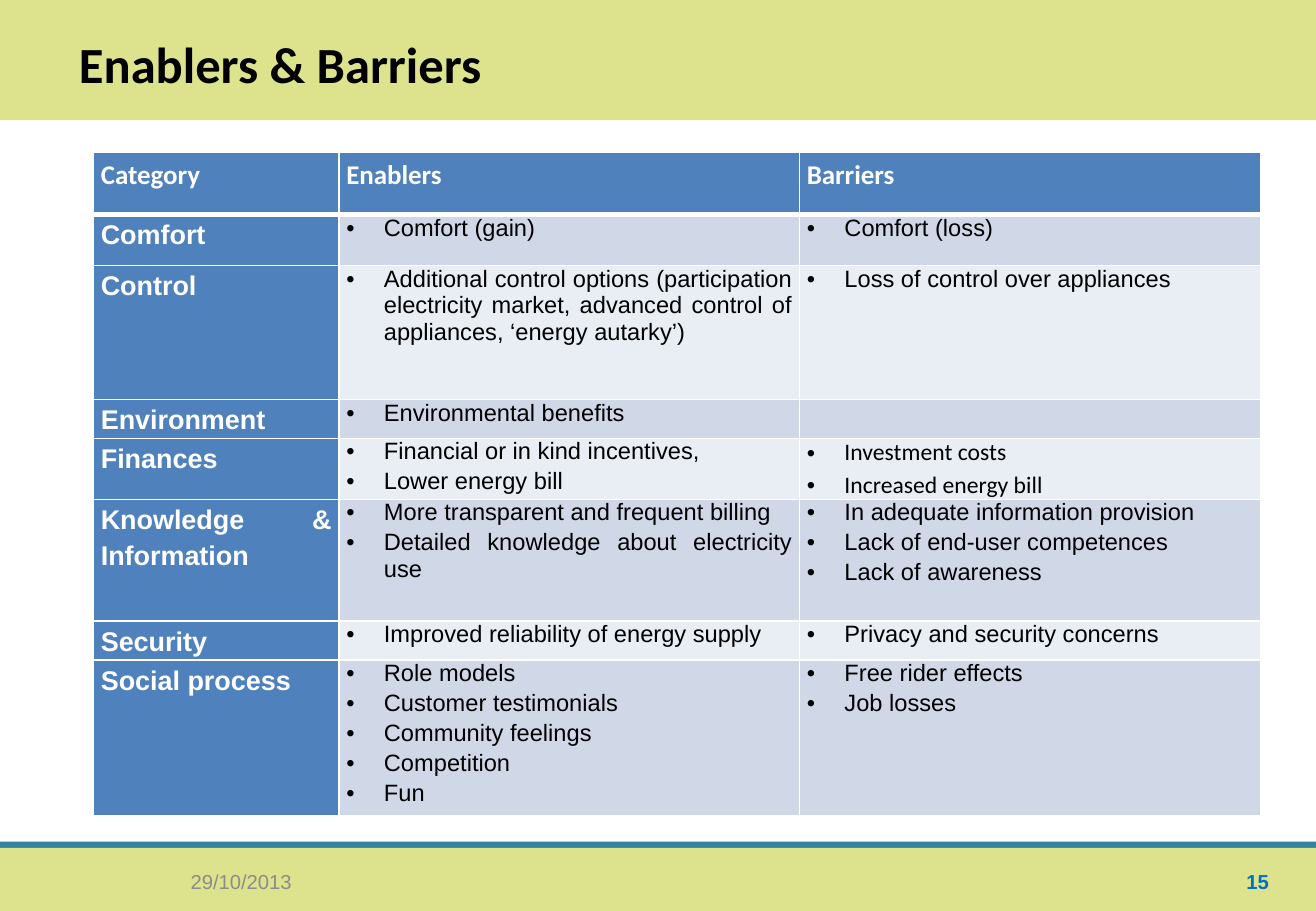
from dataclasses import dataclass

from lxml.etree import SubElement
from pptx import Presentation
from pptx.dml.color import RGBColor
from pptx.enum.shapes import MSO_SHAPE as Shape
from pptx.enum.text import MSO_ANCHOR as Anchor, PP_ALIGN as Align
from pptx.oxml import parse_xml
from pptx.oxml.ns import nsdecls, qn
from pptx.util import Emu, Inches, Pt

WIDTH, HEIGHT = Inches(10.83), Inches(7.5)
WHITE, BLACK, BLUE, LIME, TEAL = "FFFFFF", "000000", "4F81BD", "DDE38D", "31859C"
STRIPES = ("E9EDF4", "D0D8E8")
COLUMN_SHARES = (18.65, 35, 35.05)
ROW_SHARES = (6.9, 5.6, 14.7, 4, 6.7, 13.35, 4, 16)
HEADINGS = ("Category", "Enablers", "Barriers")


@dataclass
class Box:
    """Place and size, in percent of the slide's width and height."""
    left: float
    top: float
    width: float
    height: float

    def lengths(self) -> tuple[Emu, Emu, Emu, Emu]:
        """Return left, top, width and height as lengths."""
        return across(self.left), down(self.top), across(self.width), down(self.height)


@dataclass
class Style:
    """Look of the text in one paragraph."""
    size: float
    color: str
    bold: bool = False
    font: str = "Arial"
    align: Align = Align.LEFT


@dataclass
class Band:
    """Coloured strip across the slide."""
    box: Box
    color: str


@dataclass
class Label:
    """Short text in the footer."""
    box: Box
    text: str
    style: Style


@dataclass
class Category:
    """One body row of the table."""
    name: str
    enablers: tuple[str, ...]
    barriers: tuple[str, ...]
    barrier_font: str = "Arial"


BANDS = (
    Band(Box(0, 92.4, 100, 0.67), TEAL),
    Band(Box(0, 93.07, 100, 6.93), LIME),
    Band(Box(0, 0, 100, 13.2), LIME),
)
LABELS = (
    Label(Box(13.57, 94.13, 30.56, 5.33), "29/10/2013", Style(12, "8C8C8C")),
    Label(Box(89.47, 94.13, 7.85, 5.33), "15", Style(12, "0070C0", True, align=Align.RIGHT)),
)
CATEGORIES = (
    Category("Comfort", ("Comfort (gain)",), ("Comfort (loss)",)),
    Category("Control",
             ("Additional control options (participation electricity market, "
              "advanced control of appliances, ‘energy autarky’)",),
             ("Loss of control over appliances",)),
    Category("Environment", ("Environmental benefits",), ()),
    Category("Finances", ("Financial or in kind incentives,", "Lower energy bill"),
             ("Investment costs", "Increased energy bill"), "Calibri"),
    Category("Knowledge & Information",
             ("More transparent and frequent billing", "Detailed knowledge about electricity use"),
             ("In adequate information provision", "Lack of end-user competences",
              "Lack of awareness")),
    Category("Security", ("Improved reliability of energy supply",),
             ("Privacy and security concerns",)),
    Category("Social process",
             ("Role models", "Customer testimonials", "Community feelings", "Competition", "Fun"),
             ("Free rider effects", "Job losses")),
)


def across(percent: float) -> Emu:
    """Turn a share of the slide's width into a length."""
    return Emu(round(WIDTH * percent / 100))


def down(percent: float) -> Emu:
    """Turn a share of the slide's height into a length."""
    return Emu(round(HEIGHT * percent / 100))


def paint(target, color: str) -> None:
    """Give a fill or a font a solid colour."""
    if hasattr(target, "solid"):
        target.solid()
        target.fore_color.rgb = RGBColor.from_string(color)
    else:
        target.color.rgb = RGBColor.from_string(color)


def style_paragraph(paragraph, style: Style) -> None:
    """Apply a style to a paragraph."""
    paragraph.alignment = style.align
    font = paragraph.font
    font.size, font.bold, font.name = Pt(style.size), style.bold, style.font
    paint(font, style.color)


def add_band(slide, band: Band) -> None:
    """Draw a coloured strip."""
    shape = slide.shapes.add_shape(Shape.RECTANGLE, *band.box.lengths())
    shape.shadow.inherit = False
    paint(shape.fill, band.color)
    shape.line.fill.background()


def write_label(shape, text: str, style: Style) -> None:
    """Write one vertically centred line in a shape."""
    frame = shape.text_frame
    frame.word_wrap = True
    frame.vertical_anchor = Anchor.MIDDLE
    frame.text = text
    style_paragraph(frame.paragraphs[0], style)


def add_bullet(paragraph) -> None:
    """Give a paragraph a hanging bullet."""
    properties = paragraph._p.get_or_add_pPr()
    properties.set("marL", str(Inches(0.31)))
    properties.set("indent", str(-Inches(0.31)))
    SubElement(properties, qn("a:buFont"), typeface="Arial")
    SubElement(properties, qn("a:buChar"), char="•")


def format_cell(cell, color: str, row: int) -> None:
    """Set a cell's margins, fill and white borders."""
    cell.margin_left = cell.margin_right = Inches(0.06)
    cell.margin_top = cell.margin_bottom = 0
    paint(cell.fill, color)
    thick_side = {0: "B", 1: "T"}.get(row)
    for index, side in enumerate("LRTB"):
        width = Pt(3 if side == thick_side else 1)
        border = parse_xml(
            f'<a:ln{side} {nsdecls("a")} w="{width}"><a:solidFill>'
            f'<a:srgbClr val="{WHITE}"/></a:solidFill></a:ln{side}>')
        cell._tc.get_or_add_tcPr().insert(index, border)


def write_heading(cell, text: str, font: str) -> None:
    """Write a bold white heading in a cell."""
    cell.text = text
    paragraph = cell.text_frame.paragraphs[0]
    paragraph.line_spacing = 1.2
    style_paragraph(paragraph, Style(16, WHITE, True, font, Align.JUSTIFY))


def write_bullets(cell, items: tuple[str, ...], font: str) -> None:
    """Write a bulleted list in a cell."""
    frame = cell.text_frame
    for index, item in enumerate(items):
        paragraph = frame.add_paragraph() if index else frame.paragraphs[0]
        paragraph.text = item
        add_bullet(paragraph)
        if index:
            paragraph.space_before = Pt(2)
        style_paragraph(paragraph, Style(14, BLACK, False, font, Align.JUSTIFY))


def add_category_table(slide) -> None:
    """Draw the table of enablers and barriers."""
    box = Box(7.11, 16.67, sum(COLUMN_SHARES), sum(ROW_SHARES))
    table = slide.shapes.add_table(len(ROW_SHARES), len(COLUMN_SHARES), *box.lengths()).table
    for column, share in zip(table.columns, COLUMN_SHARES):
        column.width = across(share)
    for index, (row, share) in enumerate(zip(table.rows, ROW_SHARES)):
        row.height = down(share)
        for position, cell in enumerate(row.cells):
            is_heading = index == 0 or position == 0
            format_cell(cell, BLUE if is_heading else STRIPES[index % 2], index)
    for cell, heading in zip(table.rows[0].cells, HEADINGS):
        write_heading(cell, heading, "Calibri")
    for index, category in enumerate(CATEGORIES, 1):
        write_heading(table.cell(index, 0), category.name, "Arial")
        write_bullets(table.cell(index, 1), category.enablers, "Arial")
        write_bullets(table.cell(index, 2), category.barriers, category.barrier_font)


def main() -> None:
    """Build and save the slide."""
    presentation = Presentation()
    presentation.slide_width, presentation.slide_height = WIDTH, HEIGHT
    slide = presentation.slides.add_slide(presentation.slide_layouts[5])
    for band in BANDS:
        add_band(slide, band)
    title = slide.shapes.title
    slide.shapes._spTree.append(title._element)
    title.left, title.top, title.width, title.height = Box(5.08, 1.73, 77.65, 10.53).lengths()
    write_label(title, "Enablers & Barriers", Style(30, BLACK, True, "Calibri"))
    for label in LABELS:
        write_label(slide.shapes.add_textbox(*label.box.lengths()), label.text, label.style)
    add_category_table(slide)
    presentation.save("out.pptx")


if __name__ == "__main__":
    main()
